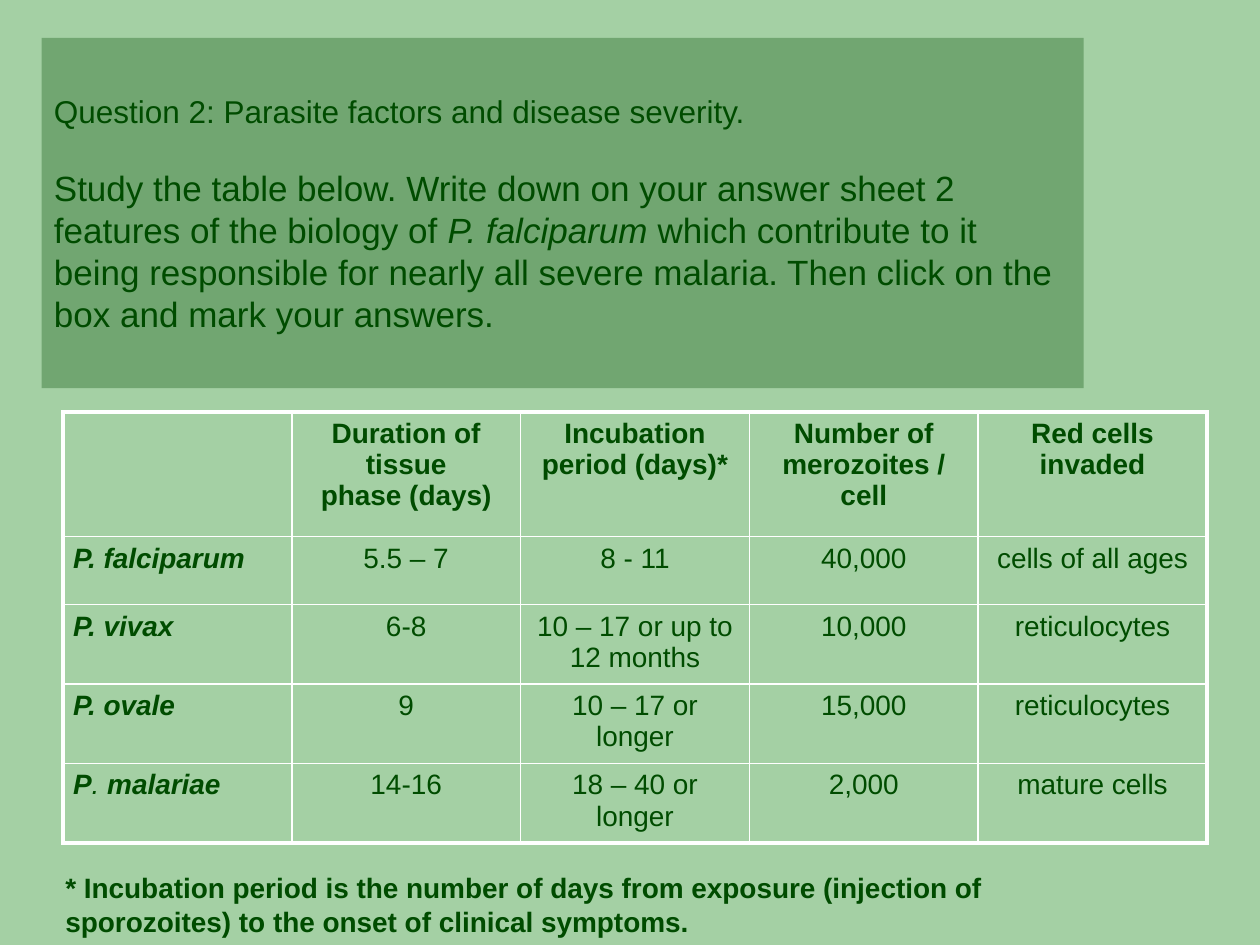
from dataclasses import dataclass

from lxml import etree
from pptx import Presentation
from pptx.dml.color import RGBColor
from pptx.enum.shapes import MSO_SHAPE
from pptx.enum.text import MSO_ANCHOR, MSO_AUTO_SIZE, PP_ALIGN
from pptx.oxml.ns import qn
from pptx.util import Inches, Pt

RECTANGLE = MSO_SHAPE.RECTANGLE
MIDDLE = MSO_ANCHOR.MIDDLE
GROW = MSO_AUTO_SIZE.SHAPE_TO_FIT_TEXT
LEFT, CENTER = PP_ALIGN.LEFT, PP_ALIGN.CENTER

BOLD = {"bold": True}
ITALIC = {"italic": True}
SPECIES = {"bold": True, "italic": True}

HEADERS = ["Duration of tissue\vphase (days)", "Incubation period (days)*",
           "Number of merozoites / cell", "Red cells invaded"]
PARASITES = [
    ([("P. falciparum", SPECIES)], "5.5 – 7", "8 - 11", "40,000", "cells of all ages"),
    ([("P. vivax", SPECIES)], "6-8", "10 – 17 or up to 12 months", "10,000", "reticulocytes"),
    ([("P. ovale", SPECIES)], "9", "10 – 17 or longer", "15,000", "reticulocytes"),
    ([("P", SPECIES), (". ", ITALIC), ("malariae", SPECIES)],
     "14-16", "18 – 40 or longer", "2,000", "mature cells"),
]
ROW_HEIGHTS = [0.99, 0.54, 0.63, 0.63, 0.63]
TITLE = [("Question 2: Parasite factors and disease severity.", {})]
TASK = [
    ("Study the table below. Write down on your answer sheet 2 features of the biology of ", {}),
    ("P. falciparum", ITALIC),
    (" which contribute to it being responsible for nearly all severe malaria. "
     "Then click on the box and mark your answers.", {}),
]
FOOTNOTE = [("* Incubation period is the number of days from exposure (injection of "
             "sporozoites) to the onset of clinical symptoms.", BOLD)]


@dataclass(frozen=True)
class Theme:
    """Colours, font and type sizes of the slide."""
    background: str = "A4D0A4"
    panel: str = "71A671"
    text: str = "004C00"
    border: str = "FFFFFF"
    font: str = "Arial"
    title_size: int = 18
    task_size: int = 20
    body_size: int = 16
    outer_line: float = 2.25
    inner_line: float = 1


class SlideBuilder:
    """Draws each kind of element on the current page."""

    def __init__(self, page, theme):
        self.page = page
        self.theme = theme
        page.background.fill.solid()
        page.background.fill.fore_color.rgb = RGBColor.from_string(theme.background)

    def add_spans(self, para, spans, size, align=LEFT):
        """Fill a paragraph with formatted spans."""
        para.alignment = align
        for text, formats in spans:
            for number, line in enumerate(text.split("\v")):
                if number:
                    para.add_line_break()
                span = para.add_run()
                span.text = line
                values = {"name": self.theme.font, "size": Pt(size),
                          "bold": False, "italic": False, **formats}
                for name, value in values.items():
                    setattr(span.font, name, value)
                span.font.color.rgb = RGBColor.from_string(self.theme.text)

    def panel(self, left, top, width, height, title, task):
        """Add the filled question panel."""
        box = self.page.shapes.add_shape(RECTANGLE, left, top, width, height)
        box.shadow.inherit = False
        box.fill.solid()
        box.fill.fore_color.rgb = RGBColor.from_string(self.theme.panel)
        box.line.fill.background()
        frame = box.text_frame
        frame.word_wrap = True
        frame.vertical_anchor = MIDDLE
        self.add_spans(frame.paragraphs[0], title, self.theme.title_size)
        para = frame.add_paragraph()
        para.space_before = Pt(21)
        self.add_spans(para, task, self.theme.task_size)

    def note(self, left, top, width, height, spans):
        """Add a wrapped text box."""
        frame = self.page.shapes.add_textbox(left, top, width, height).text_frame
        frame.word_wrap = True
        frame.auto_size = GROW
        self.add_spans(frame.paragraphs[0], spans, self.theme.body_size)

    def border(self, cell, side, width):
        """Draw one edge of a cell."""
        line = etree.SubElement(cell._tc.get_or_add_tcPr(), qn(f"a:ln{side}"), w=str(Pt(width)))
        fill = etree.SubElement(line, qn("a:solidFill"))
        etree.SubElement(fill, qn("a:srgbClr"), val=self.theme.border)

    def table(self, left, top, width, row_heights, rows):
        """Add a bordered grid with heavier outer edges."""
        last_row, last_column = len(rows) - 1, len(rows[0]) - 1
        height = Inches(sum(row_heights))
        grid = self.page.shapes.add_table(len(rows), len(rows[0]), left, top, width, height).table
        grid.first_row = grid.horz_banding = False
        for row, row_height in zip(grid.rows, row_heights):
            row.height = Inches(row_height)
        for r, row in enumerate(rows):
            for c, spans in enumerate(row):
                cell = grid.cell(r, c)
                cell.margin_left = cell.margin_right = Inches(0.08)
                cell.margin_top = cell.margin_bottom = Inches(0.05)
                edges = {"L": c == 0, "R": c == last_column, "T": r == 0, "B": r == last_row}
                for side, outer in edges.items():
                    self.border(cell, side, self.theme.outer_line if outer else self.theme.inner_line)
                cell.fill.background()
                self.add_spans(cell.text_frame.paragraphs[0], spans, self.theme.body_size,
                               CENTER if c else LEFT)


def main():
    """Build and save the deck."""
    deck = Presentation()
    deck.slide_width, deck.slide_height = Inches(10), Inches(7.5)
    builder = SlideBuilder(deck.slides.add_slide(deck.slide_layouts[6]), Theme())
    rows = [[[]] + [[(header, BOLD)] for header in HEADERS]]
    rows += [[species] + [[(value, {})] for value in values] for species, *values in PARASITES]
    builder.table(Inches(0.5), Inches(3.27), Inches(9.08), ROW_HEIGHTS, rows)
    builder.note(Inches(0.42), Inches(6.86), Inches(8.82), Inches(0.64), FOOTNOTE)
    builder.panel(Inches(0.33), Inches(0.3), Inches(8.27), Inches(2.78), TITLE, TASK)
    deck.save("out.pptx")


if __name__ == "__main__":
    main()
